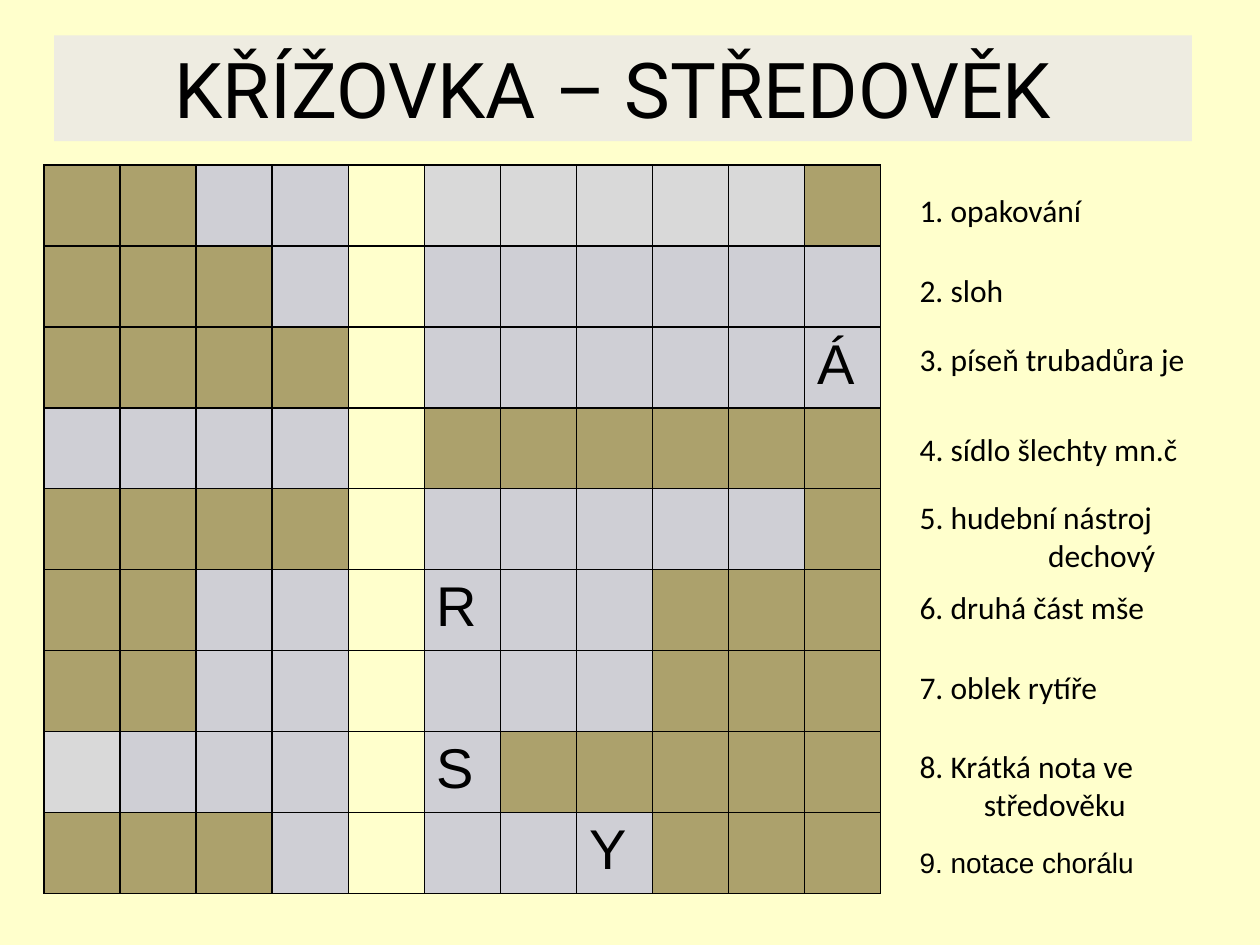
from dataclasses import dataclass

from lxml.etree import SubElement
from pptx import Presentation
from pptx.dml.color import RGBColor
from pptx.enum.text import MSO_ANCHOR, MSO_AUTO_SIZE, PP_ALIGN
from pptx.oxml.ns import qn
from pptx.slide import Slide
from pptx.table import _Cell
from pptx.text.text import _Paragraph
from pptx.util import Emu, Inches, Pt

WIDTH, HEIGHT = Inches(10), Inches(7.5)


@dataclass(frozen=True)
class Theme:
    background: str = "FFFFCC"
    banner: str = "EEECE1"
    ink: str = "000000"
    blocked: str = "ACA16C"
    answer: str = "CFCFD5"
    pale: str = "D9D9D9"
    title_font: str = "Roboto"
    letter_font: str = "Arial"
    clue_font: str = "Calibri"
    title_size: int = 44
    letter_size: int = 32
    clue_size: int = 18
    last_clue_size: int = 16
    border: int = 1


@dataclass(frozen=True)
class Area:
    left: float
    top: float
    width: float
    height: float

    def box(self) -> tuple[Emu, Emu, Emu, Emu]:
        return (across(self.left), down(self.top),
                across(self.width), down(self.height))


@dataclass(frozen=True)
class Clue:
    top: float
    width: float
    text: str
    indent: float = 0
    font: str = Theme.clue_font
    size: int = Theme.clue_size


THEME = Theme()
TITLE = Area(4.3, 3.73, 90.3, 11.2)
GRID = Area(3.5, 17.47, 66.4, 77.07)
CLUE_LEFT = 72

FILLS = {"#": THEME.blocked, ".": THEME.answer,
         "*": THEME.background, "-": THEME.pale}
ROWS = [
    "##..*-----#",
    "###.*......",
    "####*.....Á",
    "....*######",
    "####*.....#",
    "##..*R..###",
    "##..*...###",
    "-...*S#####",
    "###.*..Y###",
]
CLUES = [
    Clue(19.6, 20.3, "1. opakování"),
    Clue(28, 26, "2. sloh"),
    Clue(35.3, 28.9, "3. píseň trubadůra je"),
    Clue(44.8, 24.5, "4. sídlo šlechty mn.č"),
    Clue(52.1, 24.8, "5. hudební nástroj\ndechový", 10.2),
    Clue(61.6, 23.6, "6. druhá část mše"),
    Clue(70, 19.4, "7. oblek rytíře"),
    Clue(78.4, 26, "8. Krátká nota ve\nstředověku", 5.1),
    Clue(88.8, 26, "9. notace chorálu",
         font=THEME.letter_font, size=THEME.last_clue_size),
]


def across(percent: float) -> Emu:
    return Emu(round(WIDTH * percent / 100))


def down(percent: float) -> Emu:
    return Emu(round(HEIGHT * percent / 100))


def style(p: _Paragraph, font: str, size: int) -> None:
    for r in p.runs:
        r.font.name = font
        r.font.size = Pt(size)
        r.font.color.rgb = RGBColor.from_string(THEME.ink)


def draw_title(s: Slide, text: str) -> None:
    sp = s.shapes.title
    sp.left, sp.top, sp.width, sp.height = TITLE.box()
    sp.fill.solid()
    sp.fill.fore_color.rgb = RGBColor.from_string(THEME.banner)
    tf = sp.text_frame
    tf.text = text
    tf.auto_size = MSO_AUTO_SIZE.SHAPE_TO_FIT_TEXT
    tf.vertical_anchor = MSO_ANCHOR.TOP
    tf.margin_right = across(2.5)
    p = tf.paragraphs[0]
    p.alignment = PP_ALIGN.CENTER
    style(p, THEME.title_font, THEME.title_size)


def draw_borders(cell: _Cell) -> None:
    props = cell._tc.get_or_add_tcPr()
    for index, side in enumerate(("lnL", "lnR", "lnT", "lnB")):
        line = props.makeelement(qn(f"a:{side}"), {"w": str(Pt(THEME.border))})
        fill = SubElement(line, qn("a:solidFill"))
        SubElement(fill, qn("a:srgbClr"), val=THEME.ink)
        props.insert(index, line)


def draw_cell(cell: _Cell, mark: str) -> None:
    cell.fill.solid()
    cell.fill.fore_color.rgb = RGBColor.from_string(
        FILLS.get(mark, THEME.answer))
    draw_borders(cell)
    if mark not in FILLS:
        cell.text = mark
        style(cell.text_frame.paragraphs[0],
              THEME.letter_font, THEME.letter_size)


def draw_crossword(s: Slide) -> None:
    columns = len(ROWS[0])
    frame = s.shapes.add_table(len(ROWS), columns, *GRID.box())
    table = frame.table
    table.first_row = table.horz_banding = False
    for column in table.columns:
        column.width = across(GRID.width / columns)
    for row, marks in zip(table.rows, ROWS):
        row.height = down(GRID.height / len(ROWS))
        for cell, mark in zip(row.cells, marks):
            draw_cell(cell, mark)


def draw_clue(s: Slide, clue: Clue) -> None:
    lines = clue.text.count("\n") + 1
    area = Area(CLUE_LEFT, clue.top, clue.width, 1.3 + 4.1 * lines)
    tf = s.shapes.add_textbox(*area.box()).text_frame
    tf.word_wrap = True
    tf.auto_size = MSO_AUTO_SIZE.SHAPE_TO_FIT_TEXT
    tf.text = clue.text
    for p in tf.paragraphs:
        style(p, clue.font, clue.size)
    if clue.indent:
        tf.paragraphs[-1]._p.get_or_add_pPr().set(
            "marL", str(across(clue.indent)))


def main() -> None:
    prs = Presentation()
    prs.slide_width, prs.slide_height = WIDTH, HEIGHT
    s = prs.slides.add_slide(prs.slide_layouts[5])
    s.background.fill.solid()
    s.background.fill.fore_color.rgb = RGBColor.from_string(THEME.background)
    draw_title(s, "KŘÍŽOVKA – STŘEDOVĚK")
    draw_crossword(s)
    for clue in CLUES:
        draw_clue(s, clue)
    prs.save("out.pptx")


if __name__ == "__main__":
    main()
